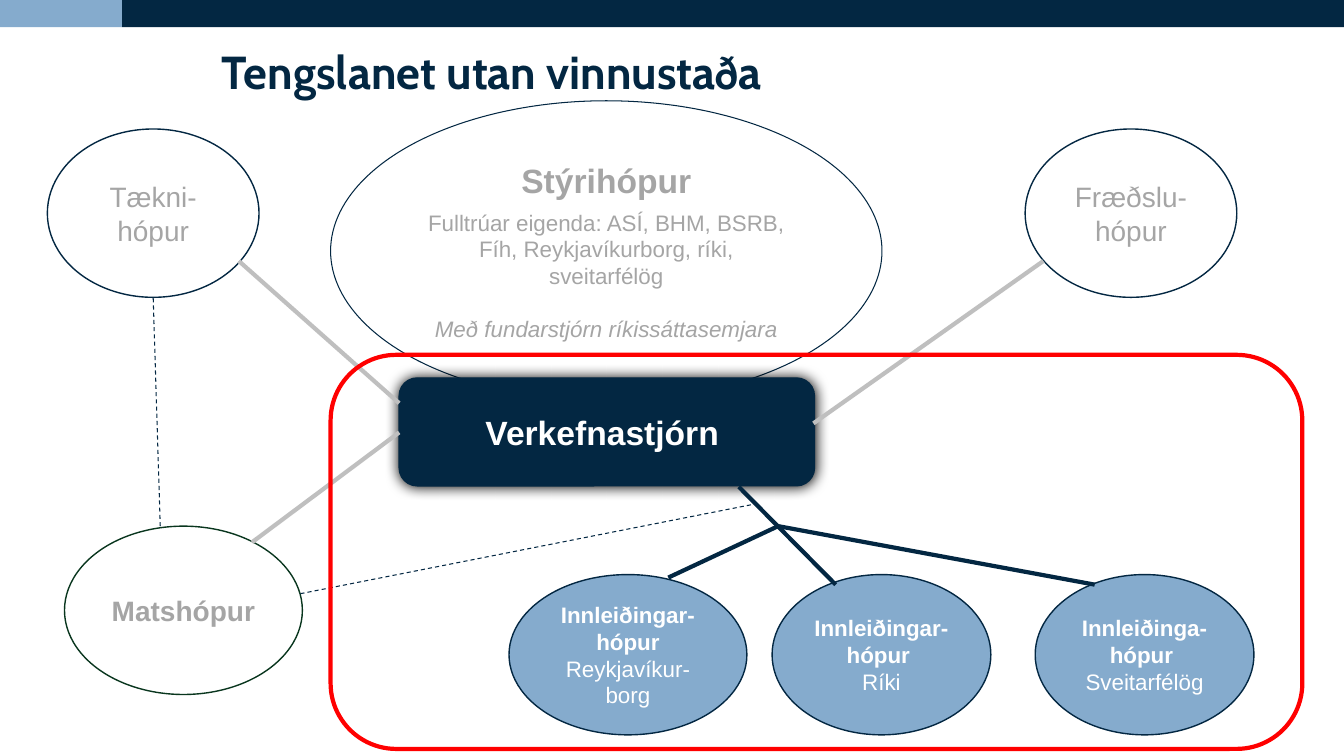
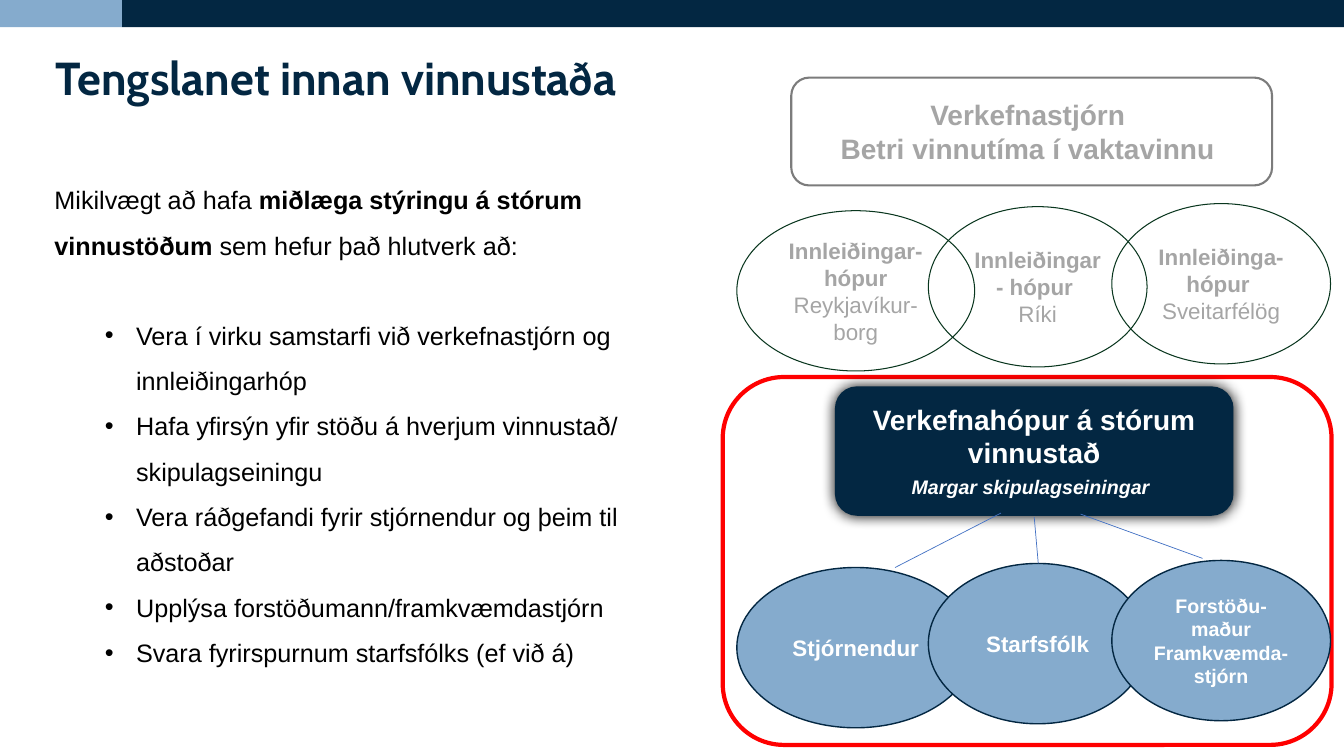
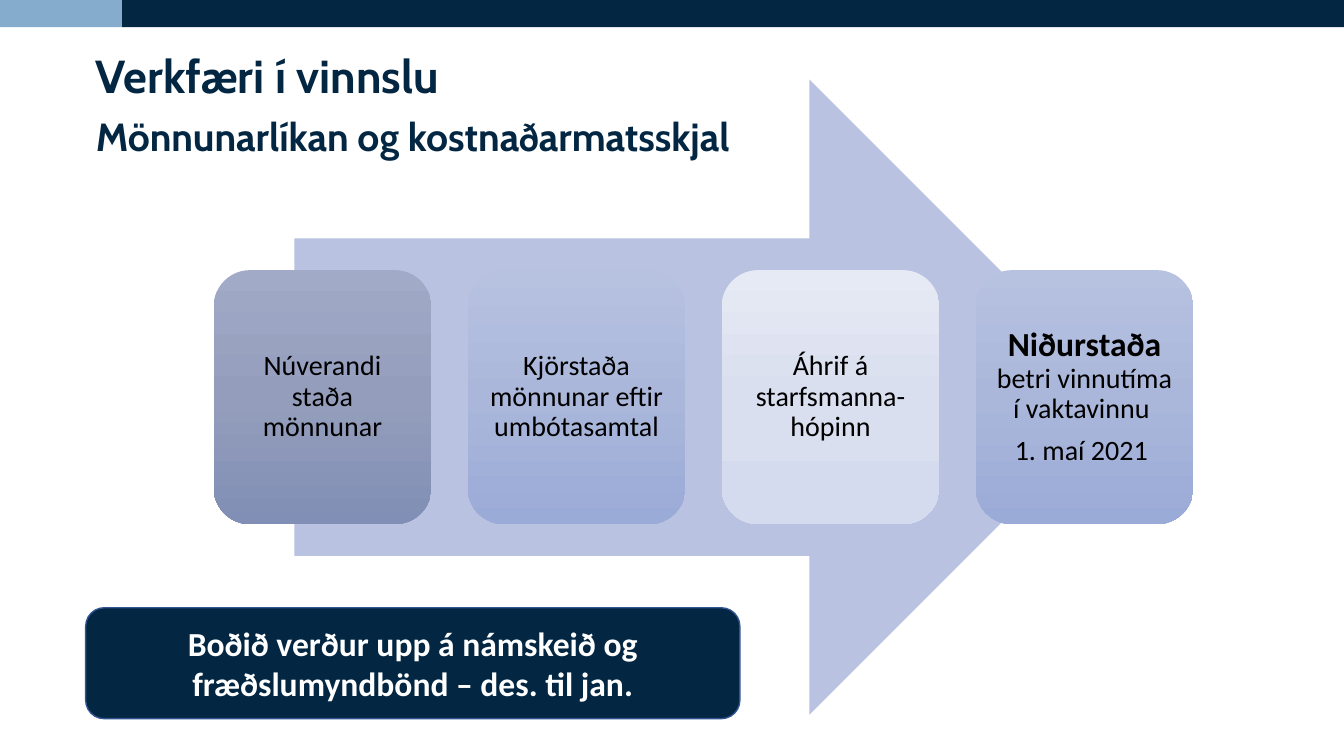
import lxml.etree
import pptx
import pptx.dml.color
import pptx.enum.dml
import pptx.enum.shapes
import pptx.enum.text
import pptx.oxml.ns
import pptx.util

COLS, ROWS = 133.33, 75  # grid of the slide, one cell is a tenth of an inch
CELL = 0.1
NAVY, SKY, RED = "032742", "85ABCD", "FF0000"
GREY, SILVER, PINE = "A5A5A5", "BFBFBF", "09361E"
WHITE, BLACK, BLUE = "FFFFFF", "000000", "4472C4"
KIND = pptx.enum.shapes.MSO_SHAPE
LEFT = pptx.enum.text.PP_ALIGN.LEFT
MID = pptx.enum.text.PP_ALIGN.CENTER
LIGHT = {"bold": False}


def span(cells):
    return pptx.util.Inches(round(cells * CELL, 3))


def hue(code):
    return pptx.dml.color.RGBColor.from_string(code)


def node(parent, tag, **attrs):
    """Append a drawing element to parent."""
    return lxml.etree.SubElement(parent, pptx.oxml.ns.qn("a:" + tag), attrs)


def write(shape, parts, size=16, font="Arial", color=WHITE, bold=False,
          italic=False, align=MID, lead=1.0, before=0, after=0):
    """Add one paragraph; parts is a text or a list of (text, changes)."""
    frame = shape.text_frame
    para = frame.add_paragraph() if frame.text else frame.paragraphs[0]
    para.alignment, para.line_spacing = align, lead
    para.space_before = pptx.util.Pt(before)
    para.space_after = pptx.util.Pt(after)
    if isinstance(parts, str):
        parts = [(parts, {})]
    base = {"size": size, "color": color, "bold": bold, "italic": italic}
    for text, changes in parts:
        look = base | changes
        run = para.add_run()
        run.text = text
        run.font.name = font
        run.font.size = pptx.util.Pt(look["size"])
        run.font.bold, run.font.italic = look["bold"], look["italic"]
        run.font.color.rgb = hue(look["color"])
    return para


def draw(slide, kind, spot, fill=None, edge=None, width=1):
    shape = slide.shapes.add_shape(kind, *map(span, spot))
    shape.shadow.inherit = False
    if fill:
        shape.fill.solid()
        shape.fill.fore_color.rgb = hue(fill)
    else:
        shape.fill.background()
    if edge:
        shape.line.color.rgb = hue(edge)
        shape.line.width = pptx.util.Pt(width)
    else:
        shape.line.fill.background()
    return shape


def link(slide, start, end, color=NAVY, width=3, dash=False):
    line = slide.shapes.add_connector(
        pptx.enum.shapes.MSO_CONNECTOR.STRAIGHT, *map(span, start + end))
    line.line.color.rgb = hue(color)
    line.line.width = pptx.util.Pt(width)
    if dash:
        line.line.dash_style = pptx.enum.dml.MSO_LINE.DASH
    node(line.element.spPr, "effectLst")


def oval(slide, spot, lines, fill=None, edge=NAVY, width=1, **look):
    shape = draw(slide, KIND.OVAL, spot, fill, edge, width)
    for line in lines:
        write(shape, line, **look)


def glow(slide, spot):
    """Draw a dark rounded box with a soft black shadow."""
    shape = draw(slide, KIND.ROUNDED_RECTANGLE, spot, NAVY, NAVY)
    effect = shape.element.spPr.find(pptx.oxml.ns.qn("a:effectLst"))
    shade = node(effect, "outerShdw", blurRad="127000", dist="0",
                 dir="6540000", algn="ctr", rotWithShape="0")
    node(shade, "srgbClr", val=BLACK)
    return shape


def blend(shape, colors):
    """Fill from top to bottom with evenly spaced colours."""
    shape.fill.gradient()
    shape.fill.gradient_angle = 270
    stops = shape.element.spPr.find(".//" + pptx.oxml.ns.qn("a:gsLst"))
    for stop in list(stops):
        stops.remove(stop)
    for i, color in enumerate(colors):
        share = 100000 * i // (len(colors) - 1)
        node(node(stops, "gs", pos=str(share)), "srgbClr", val=color)


def fit(holder, spot):
    """Move a placeholder and align its text to the top."""
    holder.left, holder.top, holder.width, holder.height = map(span, spot)
    frame = holder.text_frame
    frame.word_wrap = True
    frame.auto_size = pptx.enum.text.MSO_AUTO_SIZE.NONE
    frame.vertical_anchor = pptx.enum.text.MSO_ANCHOR.TOP
    return holder


def start(deck, layout, spot, *lines):
    """Add a slide with its title; lines are (text, size)."""
    slide = deck.slides.add_slide(deck.slide_layouts[layout])
    title = fit(slide.shapes.title, spot)
    for i, (text, size) in enumerate(lines):
        write(title, text, size=size, font="Cabin", color=NAVY, bold=True,
              align=LEFT, lead=0.9, before=10 if i else 0)
    return slide


def bands(deck, slide):
    """Draw the top bands and hand them to the slide master."""
    tree = deck.slide_master.shapes.element
    split = 12.1
    for x, wide, color in ((split, COLS - split, NAVY), (0, split, SKY)):
        band = draw(slide, KIND.RECTANGLE, (x, 0, wide, 2.7), color)
        tree.append(band.element)


def team(name, owner):
    return [[(name, {})], [(owner, LIGHT)]]


CITY = [[("Innleiðingar- hópur ", {}), ("Reykjavíkur-borg", LIGHT)]]
TOWNS = team("Innleiðinga- hópur ", "Sveitarfélög")


def outer(slide):
    hub = draw(slide, KIND.OVAL, (32.8, 10, 54.7, 29.8), None, NAVY, 0.75)
    write(hub, "Stýrihópur", size=24, color=GREY, bold=True, before=6)
    write(hub, "Fulltrúar eigenda: ASÍ, BHM, BSRB, Fíh, Reykjavíkurborg, "
          "ríki, sveitarfélög", color=GREY, before=6)
    write(hub, "Með fundarstjórn ríkissáttasemjara", color=GREY, italic=True,
          before=18.4)
    board = glow(slide, (39.6, 37.5, 41.2, 10.7))
    write(board, "Verkefnastjórn ", size=24, bold=True)

    state = team("Innleiðingar- hópur ", "Ríki")
    for x, wide, lines in ((50.5, 23.6, CITY), (76.6, 21.7, state),
                           (102.7, 21.7, TOWNS)):
        oval(slide, (x, 57, wide, 15.9), lines, SKY, bold=True)
    oval(slide, (6.4, 52.2, 23.6, 16.7), ["Matshópur"], edge=PINE, size=20,
         color=GREY, bold=True)
    for x, name in ((4.7, "Tækni-hópur"), (101.7, "Fræðslu-hópur")):
        oval(slide, (x, 12.8, 21, 16.7), [name], size=20, color=GREY)

    fork = (77.2, 52.2)
    link(slide, (73.3, 48.3), (82.9, 58))
    for end in ((108.6, 58), (66.3, 57.3)):
        link(slide, fork, end)
    for begin, end in (((39.6, 42.9), (25, 53.8)), ((39.6, 40), (23.7, 25.9)),
                       ((103.5, 25.9), (80.7, 42))):
        link(slide, begin, end, SILVER)
    for begin, end in (((15.9, 52.2), (15.2, 29.5)),
                       ((29.8, 58.9), (74.9, 50))):
        link(slide, begin, end, width=0.75, dash=True)
    draw(slide, KIND.ROUNDED_RECTANGLE, (32.8, 35.2, 96.4, 39.1), None, RED, 3)


def tasks(slide):
    body = fit(slide.placeholders[1], (4.4, 16.3, 59.3, 35))
    look = {"size": 18, "color": BLACK, "align": LEFT, "lead": 1.5}
    strong = {"bold": True}
    intro = write(body, [
        ("Mikilvægt að hafa ", {}),
        ("miðlæga stýringu á stórum vinnustöðum ", strong),
        ("sem hefur það hlutverk að:", {})], after=32, **look)
    props = intro._p.get_or_add_pPr()
    props.set("marL", "0")
    props.set("indent", "0")
    node(props, "buNone")
    for text in ("Vera í virku samstarfi við verkefnastjórn og innleiðingarhóp",
                 "Hafa yfirsýn yfir stöðu á hverjum vinnustað/ skipulagseiningu",
                 "Vera ráðgefandi fyrir stjórnendur og þeim til aðstoðar",
                 "Upplýsa forstöðumann/framkvæmdastjórn",
                 "Svara fyrirspurnum starfsfólks (ef við á)"):
        item = write(body, text, **look)
        item.level = 1
        props = item._p.get_or_add_pPr()
        props.set("marL", str(span(8.1)))
        props.set("indent", str(-span(3.1)))
        node(props, "buFont", typeface="Arial")
        node(props, "buChar", char="•")


def inner(slide):
    tasks(slide)
    board = draw(slide, KIND.ROUNDED_RECTANGLE, (78.5, 7.7, 47.7, 10.7),
                 None, "7C7C7C", 1.5)
    for text in ("Verkefnastjórn ", "Betri vinnutíma í vaktavinnu "):
        write(board, text, size=20, color=GREY, bold=True)

    spots = ((73.1, 0.7, 23.6), (92.1, 0.3, 21.7), (110.3, 0, 21.7))
    state = team("Innleiðingar - hópur ", "Ríki")
    for (x, drop, wide), lines in zip(spots, (CITY, state, TOWNS)):
        oval(slide, (x, 20.2 + drop, wide, 15.9), lines, edge=PINE,
             width=0.75, color=GREY, bold=True)
    draw(slide, KIND.ROUNDED_RECTANGLE, (71.7, 37.4, 60.4, 36.5), None, RED, 3)

    group = glow(slide, (82.9, 38.4, 39.4, 12.7))
    write(group, "Verkefnahópur á stórum vinnustað", size=20, bold=True)
    write(group, [("Margar skipulagseiningar", {"size": 14}), (" ", {})],
          size=18, bold=True, italic=True)
    roles = ((["Stjórnendur"], 16), (["Starfsfólk"], 16),
             (["Forstöðu-maður", "Framkvæmda-stjórn"], 14))
    for (x, drop, wide), (lines, size) in zip(spots, roles):
        oval(slide, (x, 55.6 + drop, wide, 15.9), lines, SKY, size=size,
             bold=True)
    for begin, end in (((99.3, 50.9), (88.8, 56.3)),
                       ((119.3, 55.4), (107.2, 51)),
                       ((103, 55.9), (102.6, 51.3))):
        link(slide, begin, end, BLUE, 0.5)


def steps(slide):
    draw(slide, KIND.RIGHT_ARROW, (29.2, 7.9, 82.6, 63), "B9C2E1")
    mist = ("B7C2E1", "AAB7DA", "9BABD8")
    result = [("Niðurstaða ", {"size": 24, "bold": True}),
              ("betri vinnutíma í vaktavinnu ", {})]
    cards = (
        (("A1AAC7", "949EBC", "818EB5"), ["Núverandi staða mönnunar"], 0.8),
        (mist, ["Kjörstaða mönnunar eftir umbótasamtal"], 0.8),
        (("E6EAF4", "DADFEF", "D5DBEE"), ["Áhrif á starfsmanna-hópinn"], 0.8),
        (mist, [result, "1. maí 2021 "], 1))
    for i, (colors, lines, inset) in enumerate(cards):
        card = draw(slide, KIND.ROUNDED_RECTANGLE,
                    (21.2 + 25.2 * i, 26.8, 21.6, 25.2))
        blend(card, colors)
        frame = card.text_frame
        frame.margin_left = frame.margin_right = span(inset)
        frame.margin_top = frame.margin_bottom = span(inset)
        for line in lines:
            write(card, line, size=20, font="Calibri", color=BLACK, lead=0.9,
                  after=8.4)
    note = draw(slide, KIND.ROUNDED_RECTANGLE, (8.5, 60.3, 64.9, 11), NAVY,
                "325491")
    write(note, "Boðið verður upp á námskeið og fræðslumyndbönd – des. til jan.",
          size=24, font="Calibri", bold=True)


def main():
    deck = pptx.Presentation()
    deck.slide_width, deck.slide_height = span(COLS), span(ROWS)
    first = start(deck, 5, (21, 4.4, 86.2, 8.6),
                  ("Tengslanet utan vinnustaða", 33))
    bands(deck, first)
    outer(first)
    inner(start(deck, 1, (4.5, 5, 68.6, 8.6),
                ("Tengslanet innan vinnustaða", 33)))
    steps(start(deck, 5, (8.5, 4.8, 73.7, 8.6),
                ("Verkfæri í vinnslu", 33),
                ("Mönnunarlíkan og kostnaðarmatsskjal", 28)))
    deck.save("out.pptx")


if __name__ == "__main__":
    main()
